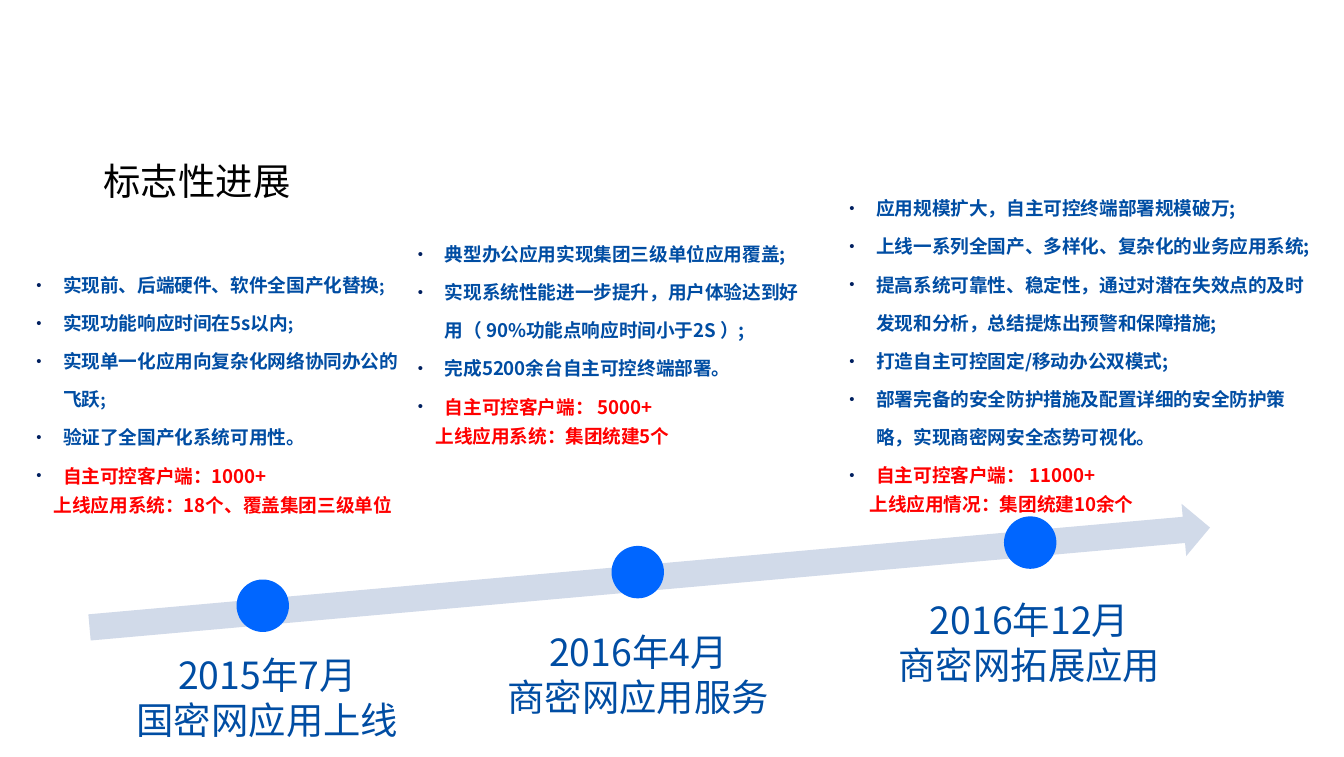
from lxml.etree import SubElement
from pptx import Presentation
from pptx.dml.color import RGBColor
from pptx.enum.shapes import MSO_SHAPE as Shape
from pptx.enum.text import MSO_ANCHOR as Anchor, MSO_AUTO_SIZE as AutoSize, PP_ALIGN as Align
from pptx.oxml.ns import qn
from pptx.util import Inches, Pt

# Content
TITLE = "标志性进展"
COLORS = {"text": "004DA3", "key": "FF0000", "bullet": "002060",
          "title": "000000", "arrow": "D1DAE9", "dot": "0066FF"}
FONT = "Noto Sans CJK SC"
DOT = 0.39
LABEL_SIZE = (2.18, 0.77)
MILESTONES = [
    {"label": ["2015年7月", "国密网应用上线"], "label_at": (0.9, 4.8), "dot_at": (1.76, 4.31),
     "list_box": (0.17, 1.87, 2.94, 2.04), "mark_size": 9, "indent": 0.13,
     "points": ["实现前、后端硬件、软件全国产化替换;",
                "实现功能响应时间在5s以内;",
                "实现单一化应用向复杂化网络协同办公的飞跃;",
                "验证了全国产化系统可用性。"],
     "clients": "自主可控客户端：1000+",
     "systems": "上线应用系统：18个、覆盖集团三级单位"},
    {"label": ["2016年4月", "商密网应用服务"], "label_at": (3.66, 4.63), "dot_at": (4.55, 4.06),
     "list_box": (3.01, 1.64, 3.13, 1.75), "mark_size": 10, "indent": 0.13,
     "points": ["典型办公应用实现集团三级单位应用覆盖;",
                "实现系统性能进一步提升，用户体验达到好用（ 90%功能点响应时间小于2S ）;",
                "完成5200余台自主可控终端部署。"],
     "clients": "自主可控客户端： 5000+",
     "systems": "上线应用系统：集团统建5个"},
    {"label": ["2016年12月", "商密网拓展应用"], "label_at": (6.57, 4.39), "dot_at": (7.47, 3.84),
     "list_box": (6.22, 1.3, 3.66, 2.61), "mark_size": 10, "indent": 0.15,
     "points": ["应用规模扩大，自主可控终端部署规模破万;",
                "上线一系列全国产、多样化、复杂化的业务应用系统;",
                "提高系统可靠性、稳定性，通过对潜在失效点的及时发现和分析，总结提炼出预警和保障措施;",
                "打造自主可控固定/移动办公双模式;",
                "部署完备的安全防护措施及配置详细的安全防护策略，实现商密网安全态势可视化。"],
     "clients": "自主可控客户端： 11000+",
     "systems": "上线应用情况：集团统建10余个"},
]


def place(box, left, top, width, height):
    box.left, box.top, box.width, box.height = map(Inches, (left, top, width, height))


def prepare(frame):
    frame.word_wrap = True
    frame.auto_size = AutoSize.NONE
    frame.vertical_anchor = Anchor.TOP


def add_span(para, text, size, color, bold=False):
    span = para.add_run()
    span.text = text
    font = span.font
    font.name, font.size, font.bold = FONT, Pt(size), bold
    font.color.rgb = RGBColor.from_string(COLORS[color])
    SubElement(span._r.get_or_add_rPr(), qn("a:ea"), typeface=FONT)


def set_bullet(para, bulleted, margin):
    props = para._p.get_or_add_pPr()
    props.set("marL", str(Inches(margin)))
    props.set("indent", str(-Inches(margin) if bulleted else 0))
    props.set("hangingPunct", "0")
    if not bulleted:
        SubElement(props, qn("a:buNone"))
        return
    color = SubElement(props, qn("a:buClr"))
    SubElement(color, qn("a:srgbClr"), val=COLORS["bullet"])
    SubElement(props, qn("a:buSzPct"), val="80000")
    SubElement(props, qn("a:buFont"), typeface="Arial")
    SubElement(props, qn("a:buChar"), char="•")


def next_para(frame):
    first = frame.paragraphs[0]
    return frame.add_paragraph() if first.runs else first


def add_list(box, milestone):
    place(box, *milestone["list_box"])
    frame = box.text_frame
    prepare(frame)
    lines = [(text, "text", True) for text in milestone["points"]]
    lines += [(milestone["clients"], "key", True), (milestone["systems"], "key", False)]
    for text, color, bulleted in lines:
        para = next_para(frame)
        set_bullet(para, bulleted, 0.2 if bulleted else milestone["indent"])
        para.alignment = Align.LEFT
        para.line_spacing = 1.7 if bulleted else 1.3
        para.space_before = Pt(0)
        body = text.removesuffix(";")
        add_span(para, body, 10, color, True)
        if body != text:
            add_span(para, ";", milestone["mark_size"], color, True)


def add_label(page, milestone):
    box = page.shapes.add_textbox(0, 0, 0, 0)
    place(box, *milestone["label_at"], *LABEL_SIZE)
    prepare(box.text_frame)
    for text in milestone["label"]:
        para = next_para(box.text_frame)
        para.alignment = Align.CENTER
        add_span(para, text, 20, "text")


def add_plain(page, kind, left, top, width, height, color):
    shape = page.shapes.add_shape(kind, *map(Inches, (left, top, width, height)))
    shape.shadow.inherit = False
    shape.fill.solid()
    shape.fill.fore_color.rgb = RGBColor.from_string(COLORS[color])
    shape.line.fill.background()
    return shape


def main():
    deck = Presentation()
    deck.slide_width, deck.slide_height = Inches(10), Inches(5.63)
    page = deck.slides.add_slide(deck.slide_layouts.get_by_name("Comparison"))

    # Title
    title = page.shapes.title
    place(title, 0.67, 0.89, 1.8, 0.67)
    prepare(title.text_frame)
    para = title.text_frame.paragraphs[0]
    para.alignment = Align.LEFT
    para.line_spacing = 1.7
    add_span(para, TITLE, 20, "title")

    # Progress lists in the body placeholders
    bodies = [box for box in page.placeholders if box.placeholder_format.idx in (1, 2, 3, 4)]
    for box, milestone in zip(bodies, MILESTONES):
        add_list(box, milestone)
    for box in bodies[len(MILESTONES):]:
        box.element.getparent().remove(box.element)

    # Timeline arrow, dots and dates
    arrow = add_plain(page, Shape.RIGHT_ARROW, 0.65, 4.1, 8.37, 0.39, "arrow")
    arrow.rotation = 354.9
    for milestone in MILESTONES:
        add_plain(page, Shape.OVAL, *milestone["dot_at"], DOT, DOT, "dot")
        add_label(page, milestone)

    deck.save("out.pptx")


if __name__ == "__main__":
    main()
